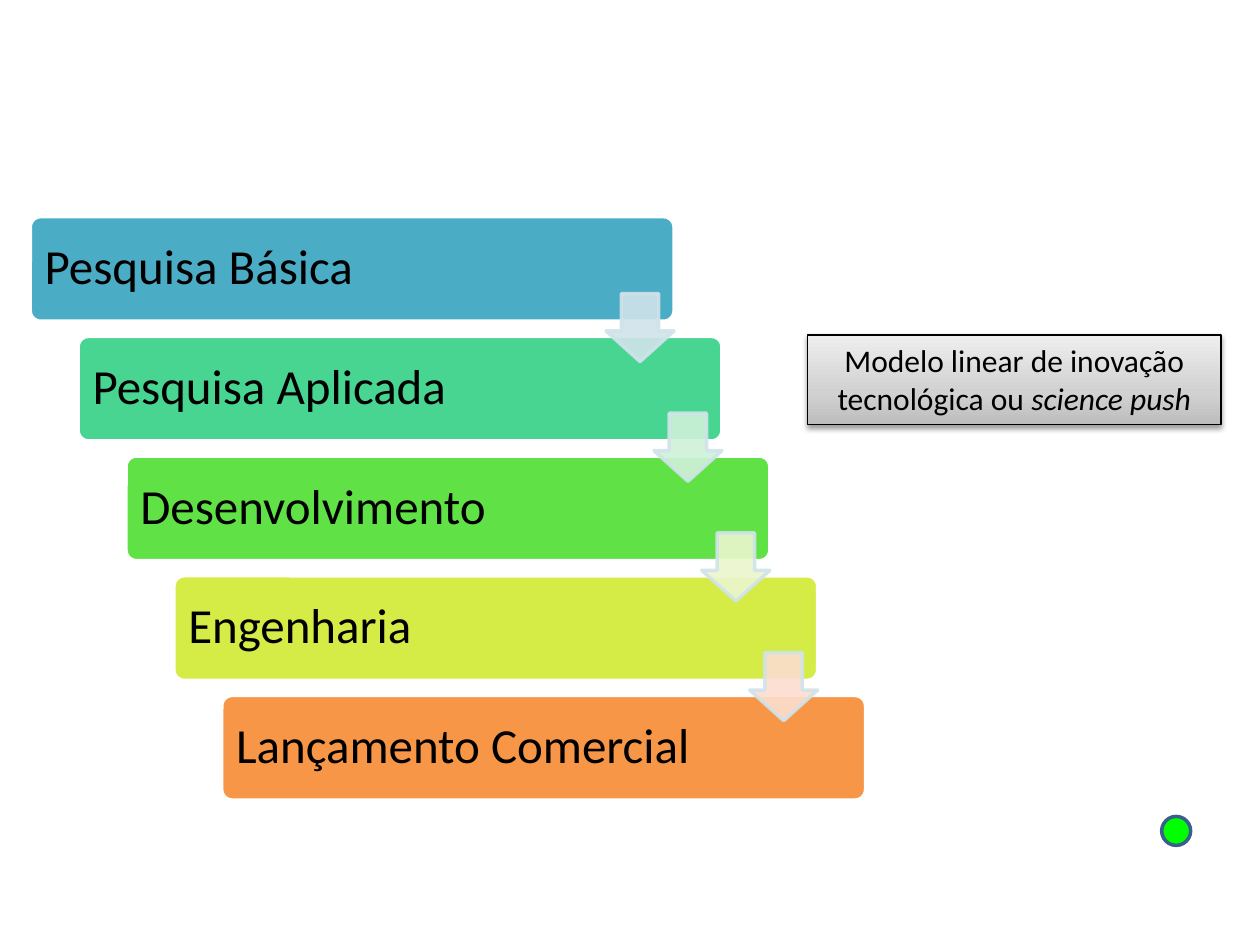
from dataclasses import dataclass

import lxml.etree
import pptx
import pptx.dml.color
import pptx.enum.shapes
import pptx.enum.text
import pptx.oxml
import pptx.oxml.ns
import pptx.util

Inches = pptx.util.Inches
Pt = pptx.util.Pt
RGB = pptx.dml.color.RGBColor.from_string
Shape = pptx.enum.shapes.MSO_SHAPE
qn = pptx.oxml.ns.qn


@dataclass(frozen=True)
class Theme:
    font: str = "Calibri"
    step_size: int = 28
    note_size: int = 18
    text: str = "000000"
    step_line: str = "FFFFFF"
    arrow_line: str = "D0E3EA"
    dot: str = "00FF00"
    dot_line: str = "3A5F8C"
    gradient: tuple = ((0, "BDBDBD"), (35, "D1D1D1"), (100, "EEEEEE"))


theme = Theme()


def add_box(kind, left, top, width, height, fill, line, line_width=2):
    box = page.shapes.add_shape(kind, Inches(left), Inches(top), Inches(width), Inches(height))
    box.shadow.inherit = False
    box.fill.solid()
    box.fill.fore_color.rgb = RGB(fill)
    box.line.color.rgb = RGB(line)
    box.line.width = Pt(line_width)
    return box


def style_text(paragraph, size, align):
    paragraph.alignment = align
    for span in paragraph.runs:
        span.font.name = theme.font
        span.font.size = Pt(size)
        span.font.color.rgb = RGB(theme.text)


deck = pptx.Presentation()
deck.slide_width, deck.slide_height = Inches(10), Inches(7.5)
page = deck.slides.add_slide(deck.slide_layouts[6])

# Staircase of innovation stages
stages = [
    ("Pesquisa Básica", "4BACC6"),
    ("Pesquisa Aplicada", "48D491"),
    ("Desenvolvimento", "60E146"),
    ("Engenharia", "D5EC46"),
    ("Lançamento Comercial", "F79646"),
]
step_x, step_y = 0.38, 0.95
for index, (label, color) in enumerate(stages):
    box = add_box(Shape.ROUNDED_RECTANGLE, 0.24 + index * step_x, 1.72 + index * step_y,
                  5.11, 0.83, color, theme.step_line)
    box.adjustments[0] = 0.1
    frame = box.text_frame
    frame.word_wrap = True
    frame.vertical_anchor = pptx.enum.text.MSO_ANCHOR.MIDDLE
    frame.margin_left = frame.margin_right = Inches(0.09)
    frame.margin_top = frame.margin_bottom = Inches(0.09)
    frame.text = label
    para = frame.paragraphs[0]
    para.line_spacing = 0.9
    style_text(para, theme.step_size, pptx.enum.text.PP_ALIGN.LEFT)

# Translucent arrows from each stage to the next
for index, color in enumerate(["D0E3EA", "CFF1D9", "EBF7CE", "FCDDCF"]):
    arrow = add_box(Shape.DOWN_ARROW, 4.81 + index * step_x, 2.33 + index * step_y,
                    0.54, 0.54, color, theme.arrow_line)
    arrow.adjustments[0] = 0.55
    arrow.adjustments[1] = 0.45
    for tint in arrow.element.spPr.iter(qn("a:srgbClr")):
        lxml.etree.SubElement(tint, qn("a:alpha"), val="90000")

# Note with the model's name
note = add_box(Shape.RECTANGLE, 6.41, 2.66, 3.28, 0.71, "D1D1D1", theme.text, 0.75)
note.fill.gradient()
note.fill.gradient_angle = 90
stops = note.element.spPr.find(qn("a:gradFill")).find(qn("a:gsLst"))
for stop in list(stops):
    stops.remove(stop)
for position, color in theme.gradient:
    stop = lxml.etree.SubElement(stops, qn("a:gs"), pos=str(position * 1000))
    lxml.etree.SubElement(stop, qn("a:srgbClr"), val=color)

effects = note.element.spPr.find(qn("a:effectLst"))
shadow = lxml.etree.SubElement(effects, qn("a:outerShdw"), blurRad=str(Pt(3.1)),
                               dist=str(Pt(1.6)), dir="5400000", rotWithShape="0")
shade = lxml.etree.SubElement(shadow, qn("a:srgbClr"), val=theme.text)
lxml.etree.SubElement(shade, qn("a:alpha"), val="38000")

frame = note.text_frame
frame.word_wrap = True
frame.vertical_anchor = pptx.enum.text.MSO_ANCHOR.TOP
frame.auto_size = pptx.enum.text.MSO_AUTO_SIZE.SHAPE_TO_FIT_TEXT
frame.text = "Modelo linear de inovação tecnológica ou "
para = frame.paragraphs[0]
term = para.add_run()
term.text = "science push"
term.font.italic = True
style_text(para, theme.note_size, pptx.enum.text.PP_ALIGN.CENTER)

# Green dot
add_box(Shape.OVAL, 9.22, 6.48, 0.23, 0.23, theme.dot, theme.dot_line)

deck.save("out.pptx")
